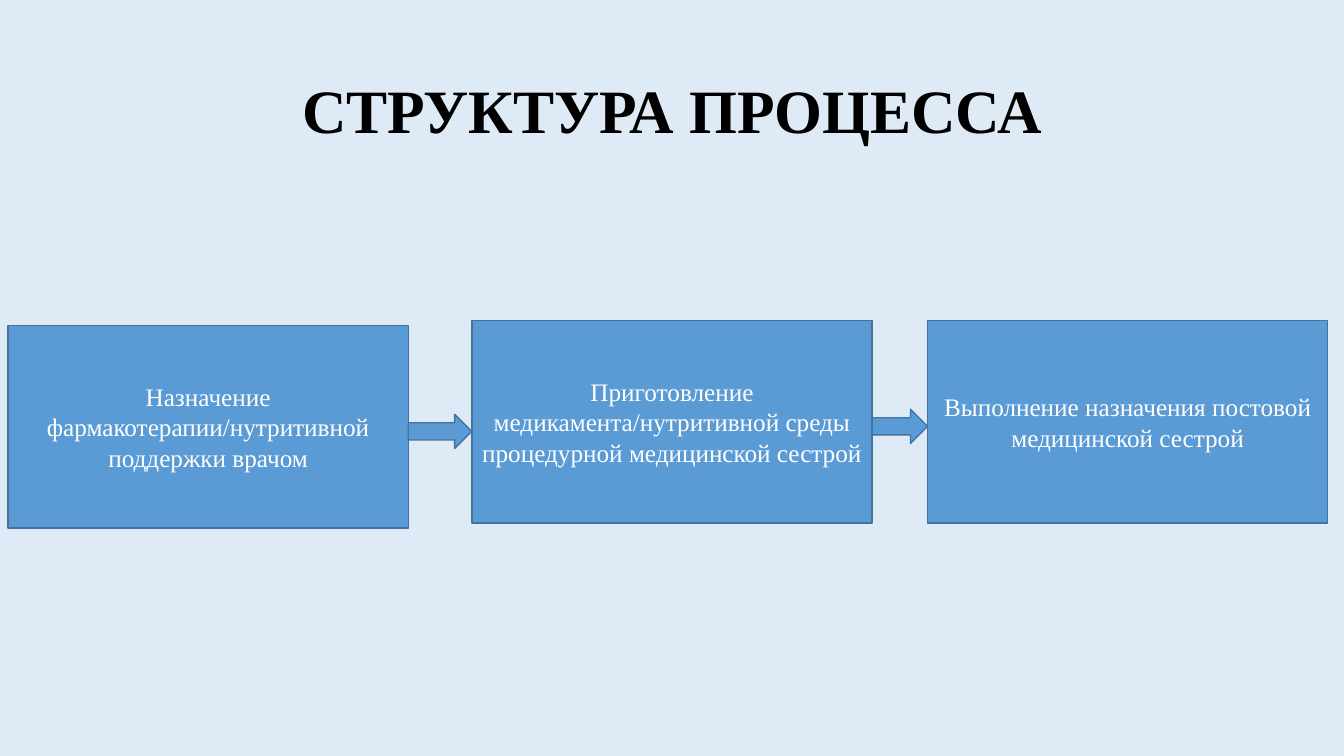
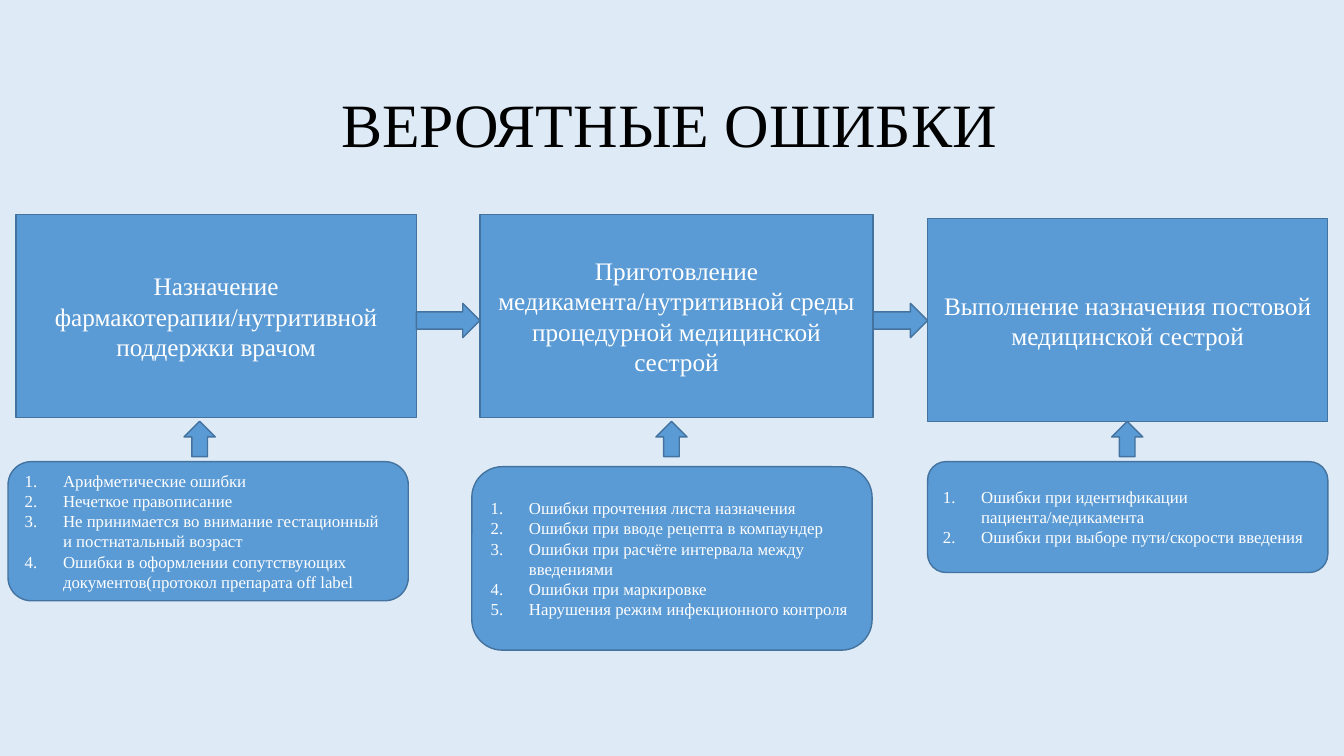
import dataclasses
import pptx
import pptx.dml.color
import pptx.enum.shapes
import pptx.enum.text
import pptx.oxml.ns
import pptx.util
import lxml.etree

KIND = pptx.enum.shapes.MSO_SHAPE
ALIGN = pptx.enum.text.PP_ALIGN
inch = pptx.util.Inches

# Content
STEPS = [
    "Назначение фармакотерапии/нутритивной поддержки врачом",
    "Приготовление медикамента/нутритивной среды процедурной медицинской сестрой",
    "Выполнение назначения постовой медицинской сестрой",
]
FAULTS = [
    ["Арифметические ошибки",
     "Нечеткое правописание",
     "Не принимается во внимание гестационный и постнатальный возраст",
     "Ошибки в оформлении сопутствующих документов(протокол препарата off label"],
    ["Ошибки прочтения листа назначения",
     "Ошибки при вводе рецепта в компаундер",
     "Ошибки при расчёте интервала между введениями",
     "Ошибки при маркировке",
     "Нарушения режим инфекционного контроля"],
    ["Ошибки при идентификации пациента/медикамента",
     "Ошибки при выборе пути/скорости введения"],
]

# Places in inches: columns, then (left, top, width) of each step
COLS = [0.08, 4.68, 9.2]
WIDE, HIGH = 3.97, 2.01
SLIDES = [
    dict(title="СТРУКТУРА ПРОЦЕССА", bold=True, at=(0.92, 0.4), faults=[],
         steps=[(COLS[0], 3.23, WIDE), (COLS[1], 3.18, WIDE), (COLS[2], 3.18, WIDE)]),
    dict(title="ВЕРОЯТНЫЕ ОШИБКИ", bold=False, at=(0.89, 0.54), faults=FAULTS,
         steps=[(0.16, 2.13, WIDE), (4.76, 2.13, 3.9), (COLS[2], 2.17, WIDE)]),
]
# Top and height of each fault list, and the middle of its arrow
LISTS = [(4.58, 1.38, 1.98), (4.63, 1.82, 6.66), (4.58, 1.1, 11.18)]


@dataclasses.dataclass(frozen=True)
class Theme:
    font: str = "Times New Roman"
    back: str = "DEEBF7"
    fill: str = "5B9BD5"
    edge: str = "43739E"
    dark: str = "000000"
    light: str = "FFFFFF"
    head: int = 44
    body: int = 18
    small: int = 12


THEME = Theme()


def tint(code):
    return pptx.dml.color.RGBColor.from_string(code)


def write(shape, lines, size=THEME.body, color=THEME.light, bold=False,
          align=ALIGN.CENTER, space=None, count=False):
    """Fill a shape with one paragraph for each line."""
    frame = shape.text_frame
    frame.word_wrap = True
    frame.vertical_anchor = pptx.enum.text.MSO_ANCHOR.MIDDLE
    for i, line in enumerate(lines):
        para = frame.paragraphs[0] if i == 0 else frame.add_paragraph()
        para.alignment = align
        if space:
            para.line_spacing = space
        run = para.add_run()
        run.text = line
        font = run.font
        font.name, font.size, font.bold = THEME.font, pptx.util.Pt(size), bold
        font.color.rgb = tint(color)
        if count:
            props = para._p.get_or_add_pPr()
            props.set("marL", str(inch(0.38)))
            props.set("indent", str(inch(-0.38)))
            mark = lxml.etree.SubElement(props, pptx.oxml.ns.qn("a:buAutoNum"))
            mark.set("type", "arabicPeriod")


def draw(slide, kind, *box):
    shape = slide.shapes.add_shape(kind, *map(inch, box))
    shape.shadow.inherit = False
    shape.fill.solid()
    shape.fill.fore_color.rgb = tint(THEME.fill)
    shape.line.color.rgb = tint(THEME.edge)
    shape.line.width = pptx.util.Pt(1)
    return shape


def build(deck, page):
    slide = deck.slides.add_slide(deck.slide_layouts[6])
    slide.background.fill.solid()
    slide.background.fill.fore_color.rgb = tint(THEME.back)

    # Title
    title = slide.shapes.add_textbox(*map(inch, (*page["at"], 11.5, 1.45)))
    write(title, [page["title"]], size=THEME.head, color=THEME.dark,
          bold=page["bold"], space=0.9)

    # Steps, and an arrow across each gap
    steps = page["steps"]
    for text, (left, top, width) in zip(STEPS, steps):
        write(draw(slide, KIND.RECTANGLE, left, top, width, HIGH), [text])
    for (left, top, width), (end, *_) in zip(steps, steps[1:]):
        start = left + width
        draw(slide, KIND.RIGHT_ARROW, start, top + 0.88, end - start, 0.34)

    # Fault lists, each with an arrow up to its step
    for lines, left, (top, high, mid) in zip(page["faults"], COLS, LISTS):
        box = draw(slide, KIND.ROUNDED_RECTANGLE, left, top, WIDE, high)
        write(box, lines, size=THEME.small, align=ALIGN.LEFT, count=True)
        draw(slide, KIND.UP_ARROW, mid - 0.31 / 2, 4.18, 0.31, 0.35)


def main():
    deck = pptx.Presentation()
    deck.slide_width, deck.slide_height = inch(13.33), inch(7.5)
    for page in SLIDES:
        build(deck, page)
    deck.save("out.pptx")


if __name__ == "__main__":
    main()
